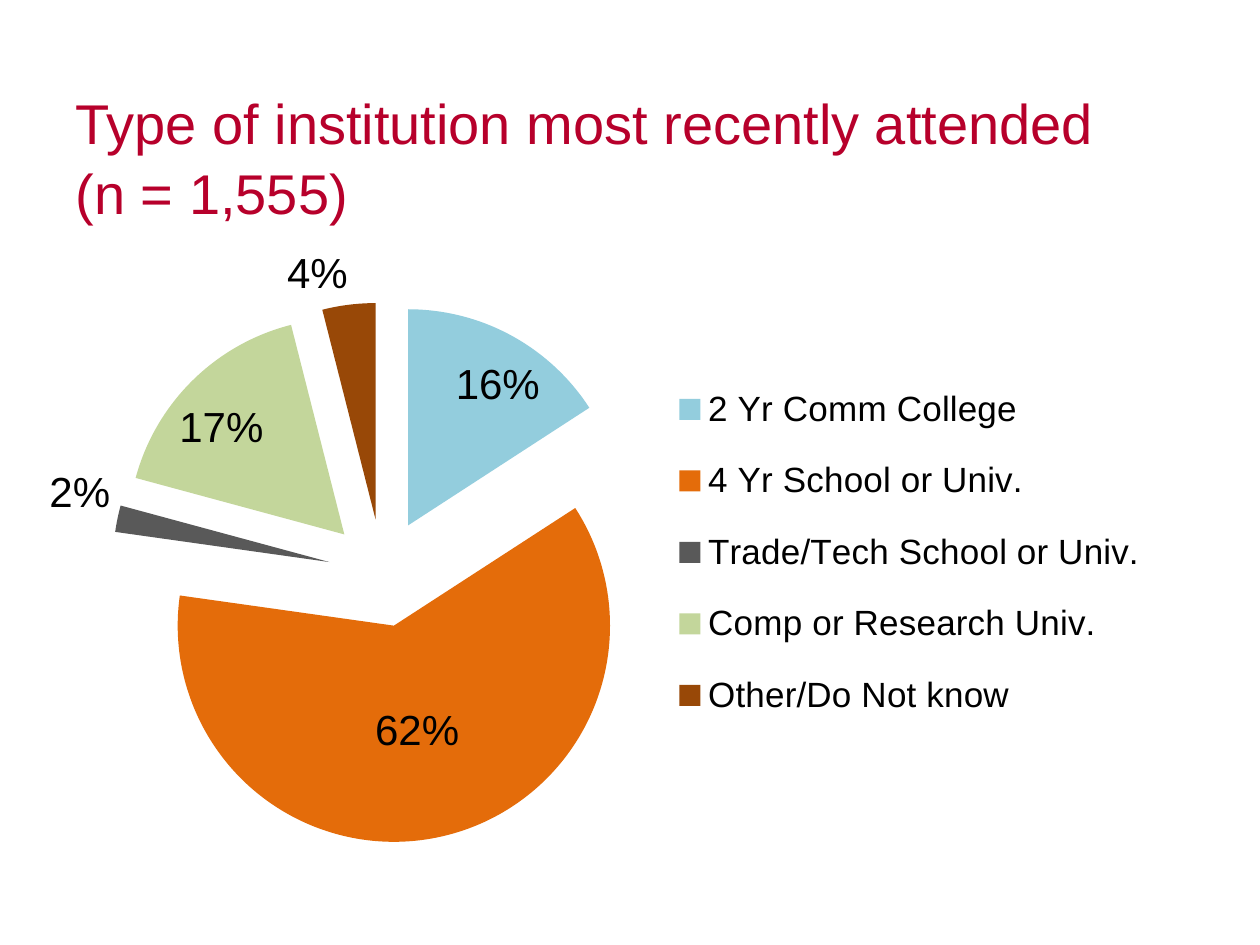
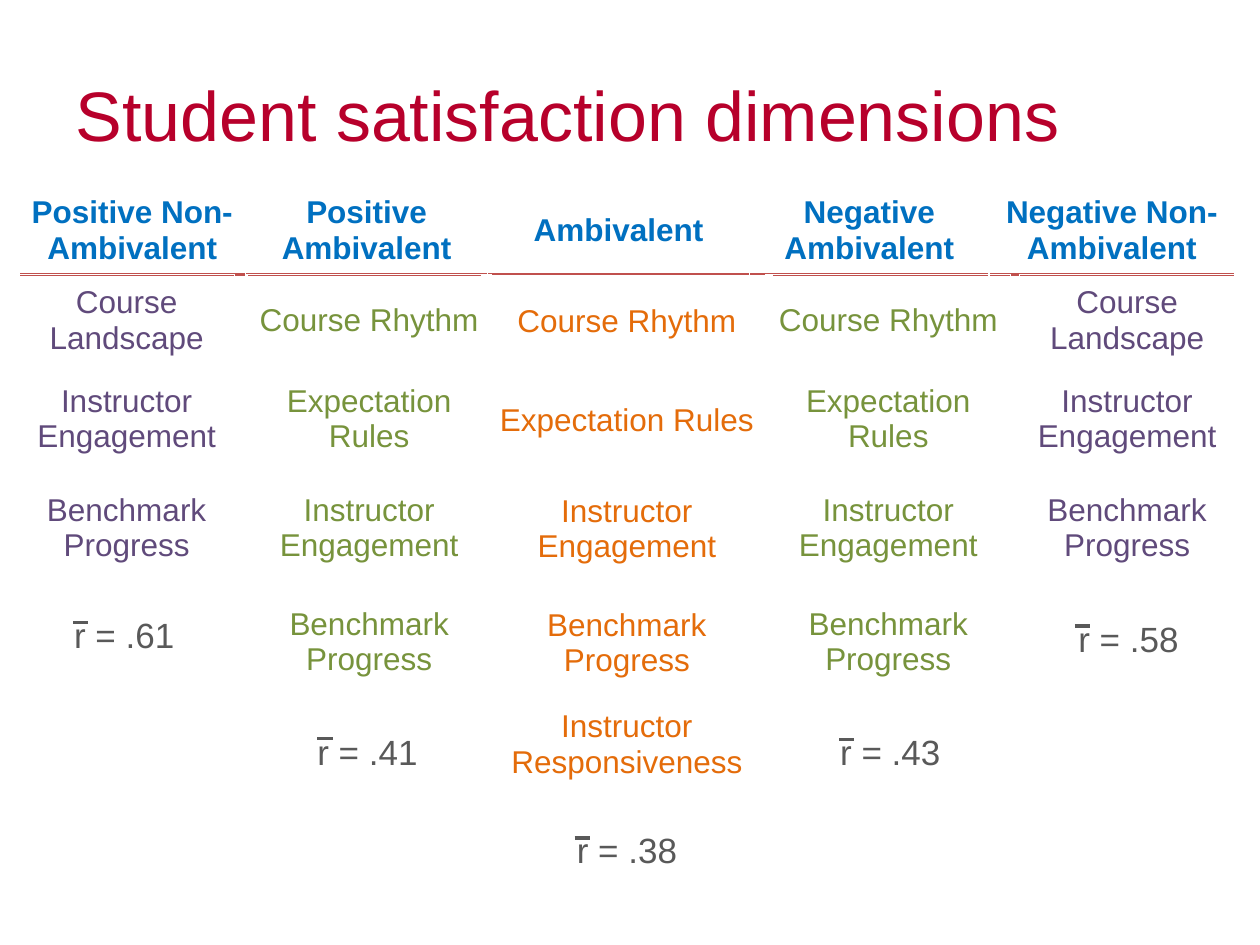
from lxml import etree
from pptx import Presentation
from pptx import util as u
from pptx.chart.data import CategoryChartData
from pptx.dml.color import RGBColor
from pptx.enum import chart as ch
from pptx.enum import shapes, text
from pptx.oxml import ns

PX = u.Inches(1) // 100

CRIMSON = RGBColor(0xB7, 0x00, 0x2B)
BLACK = RGBColor(0x00, 0x00, 0x00)
GRAY = RGBColor(0x59, 0x59, 0x59)
BLUE = RGBColor(0x00, 0x70, 0xC0)
BRICK = RGBColor(0xC0, 0x50, 0x4D)
PURPLE = RGBColor(0x60, 0x4A, 0x7B)
OLIVE = RGBColor(0x77, 0x93, 0x3C)
ORANGE = RGBColor(0xE4, 0x6C, 0x0A)
SKY = RGBColor(0x93, 0xCD, 0xDD)
SAGE = RGBColor(0xC3, 0xD6, 0x9B)
BROWN = RGBColor(0x98, 0x48, 0x07)

INSTITUTIONS = [
    ("2 Yr Comm College", 0.16, SKY),
    ("4 Yr School or Univ.", 0.62, ORANGE),
    ("Trade/Tech School or Univ.", 0.02, GRAY),
    ("Comp or Research Univ.", 0.17, SAGE),
    ("Other/Do Not know", 0.04, BROWN),
]

GROUPS = ["Positive Non-Ambivalent", "Positive Ambivalent", "Ambivalent",
          "Negative Ambivalent", "Negative Non-Ambivalent"]
GROUP_WIDTHS = [180, 192, 208, 190, 195]
ROW_HEIGHTS = [73, 83, 90, 91, 69]

NON_AMBIVALENT = ["Course Landscape", "Instructor Engagement", "Benchmark Progress"]
PARTLY_AMBIVALENT = ["Course Rhythm", "Expectation Rules",
                     "Instructor Engagement", "Benchmark Progress"]
AMBIVALENT = PARTLY_AMBIVALENT + ["Instructor Responsiveness"]

# left, top, width, dimensions, colour
DIMENSION_COLUMNS = [
    (809, 218, 171, NON_AMBIVALENT, PURPLE),
    (15, 218, 171, NON_AMBIVALENT, PURPLE),
    (196, 218, 194, PARTLY_AMBIVALENT, OLIVE),
    (608, 218, 194, PARTLY_AMBIVALENT, OLIVE),
    (382, 219, 231, AMBIVALENT, ORANGE),
]

# left, top, value, left and height of the bar over the r
MEAN_CORRELATIONS = [
    (49, 482, ".61", 58, 494),
    (242, 575, ".41", 252, 586),
    (448, 653, ".38", 456, 665),
    (657, 575, ".43", 666, 587),
    (846, 485, ".58", 853, 497),
]


def chart_tag(name, value=None):
    tag = etree.Element(ns.qn(f"c:{name}"))
    if value is not None:
        tag.set("val", str(value))
    return tag


def manual_layout(x, y, w, h, inner=False):
    """Chart layout in fractions of the chart area."""
    layout = chart_tag("layout")
    manual = chart_tag("manualLayout")
    layout.append(manual)
    if inner:
        manual.append(chart_tag("layoutTarget", "inner"))
    settings = [("xMode", "edge"), ("yMode", "edge"),
                ("x", x), ("y", y), ("w", w), ("h", h)]
    for name, value in settings:
        manual.append(chart_tag(name, value))
    return layout


class Deck:
    font = "Arial"

    def __init__(self):
        self.prs = Presentation()
        self.prs.slide_width = u.Inches(10)
        self.prs.slide_height = u.Inches(7.5)
        self.slide = None

    def set_font(self, font, size, color, bold=False):
        font.name = self.font
        font.size = u.Pt(size)
        font.color.rgb = color
        font.bold = bold

    def set_text(self, frame, words, size, color, bold=False, align=text.PP_ALIGN.LEFT):
        frame.text = words
        for paragraph in frame.paragraphs:
            paragraph.alignment = align
            for run in paragraph.runs:
                self.set_font(run.font, size, color, bold)

    def new_slide(self, title, size):
        self.slide = self.prs.slides.add_slide(self.prs.slide_layouts[5])
        heading = self.slide.shapes.title
        heading.left, heading.top = 50 * PX, 63 * PX
        heading.width, heading.height = 892 * PX, 72 * PX
        frame = heading.text_frame
        self.set_text(frame, title, size, CRIMSON)
        frame.auto_size = text.MSO_AUTO_SIZE.NONE
        frame.vertical_anchor = text.MSO_ANCHOR.TOP
        frame.paragraphs[0].line_spacing = u.Pt(40)

    def label(self, left, top, width, height, words):
        box = self.slide.shapes.add_textbox(left * PX, top * PX, width * PX, height * PX)
        box.text_frame.word_wrap = True
        self.set_text(box.text_frame, words, 20, GRAY)

    def line(self, left, y, length):
        rule = self.slide.shapes.add_connector(
            shapes.MSO_CONNECTOR.STRAIGHT,
            left * PX, y * PX, (left + length) * PX, y * PX)
        rule.line.color.rgb = GRAY
        rule.line.width = u.Pt(2)
        etree.SubElement(rule.element.spPr, ns.qn("a:effectLst"))

    def table(self, left, top, widths, heights, rows, color, bold=False, rule=None):
        grid = self.slide.shapes.add_table(
            len(rows), len(widths), left * PX, top * PX,
            sum(widths) * PX, sum(heights) * PX).table
        grid.first_row = grid.horz_banding = False
        for column, width in zip(grid.columns, widths):
            column.width = width * PX
        for row, height, entries in zip(grid.rows, heights, rows):
            row.height = height * PX
            for cell, entry in zip(row.cells, entries):
                cell.fill.background()
                cell.vertical_anchor = text.MSO_ANCHOR.MIDDLE
                self.set_text(cell.text_frame, entry, 18, color, bold,
                              text.PP_ALIGN.CENTER)
                if rule is not None:
                    self.bottom_border(cell, rule)

    def bottom_border(self, cell, color):
        border = etree.Element(ns.qn("a:lnB"), w=str(u.Pt(2.25)))
        fill = etree.SubElement(border, ns.qn("a:solidFill"))
        etree.SubElement(fill, ns.qn("a:srgbClr"), val=str(color))
        cell._tc.get_or_add_tcPr().insert(0, border)

    def exploded_pie(self, left, top, width, height, slices):
        data = CategoryChartData(number_format="0%")
        shares = [share for _, share, _ in slices]
        data.categories = [name for name, _, _ in slices]
        data.add_series("Series 1", shares)
        pie = self.slide.shapes.add_chart(
            ch.XL_CHART_TYPE.PIE, left * PX, top * PX,
            width * PX, height * PX, data).chart
        pie.has_title = False
        self.set_font(pie.font, 18, BLACK)

        plot = pie.plots[0]
        plot.vary_by_categories = True
        series = plot.series[0]
        series._element.find(ns.qn("c:cat")).addprevious(chart_tag("explosion", 25))
        for index, (_, _, color) in enumerate(slices):
            fill = series.points[index].format.fill
            fill.solid()
            fill.fore_color.rgb = color

        labels = series.data_labels
        labels.show_value = True
        labels.number_format = "0%"
        labels.number_format_is_linked = False
        labels.position = ch.XL_LABEL_POSITION.BEST_FIT
        self.set_font(labels.font, 24, BLACK)
        largest = series.points[shares.index(max(shares))].data_label
        self.set_font(largest.font, 24, BLACK)
        largest.position = ch.XL_LABEL_POSITION.CENTER

        pie.has_legend = True
        legend = pie.legend
        legend.position = ch.XL_LEGEND_POSITION.RIGHT
        legend.include_in_layout = False
        self.set_font(legend.font, 20, BLACK)
        self.place(legend._element, 1, manual_layout(0.61, 0.18, 0.35, 0.57))
        self.place(plot._element.getparent(), 0,
                   manual_layout(0.22, 0.1, 0.39, 0.79, inner=True))

    def place(self, part, index, layout):
        """Give a chart part its layout in place of any it has."""
        for old in part.findall(ns.qn("c:layout")):
            part.remove(old)
        part.insert(index, layout)


def institution_slide(deck):
    deck.new_slide("Type of institution most recently attended\v(n = 1,555)", 32)
    deck.exploded_pie(-166, 186, 1131, 543, INSTITUTIONS)


def satisfaction_slide(deck):
    deck.new_slide("Student satisfaction dimensions", 40)
    for left, top, value, bar_left, bar_y in MEAN_CORRELATIONS:
        deck.label(left, top, 110, 44, f"r = {value}")
        deck.line(bar_left, bar_y, 12)
    deck.table(15, 148, GROUP_WIDTHS, [70], [GROUPS], BLUE, bold=True, rule=BRICK)
    for left, top, width, dimensions, color in DIMENSION_COLUMNS:
        heights = ROW_HEIGHTS[:len(dimensions)]
        deck.table(left, top, [width], heights, [[name] for name in dimensions], color)


def main():
    deck = Deck()
    institution_slide(deck)
    satisfaction_slide(deck)
    deck.prs.save("out.pptx")


if __name__ == "__main__":
    main()
